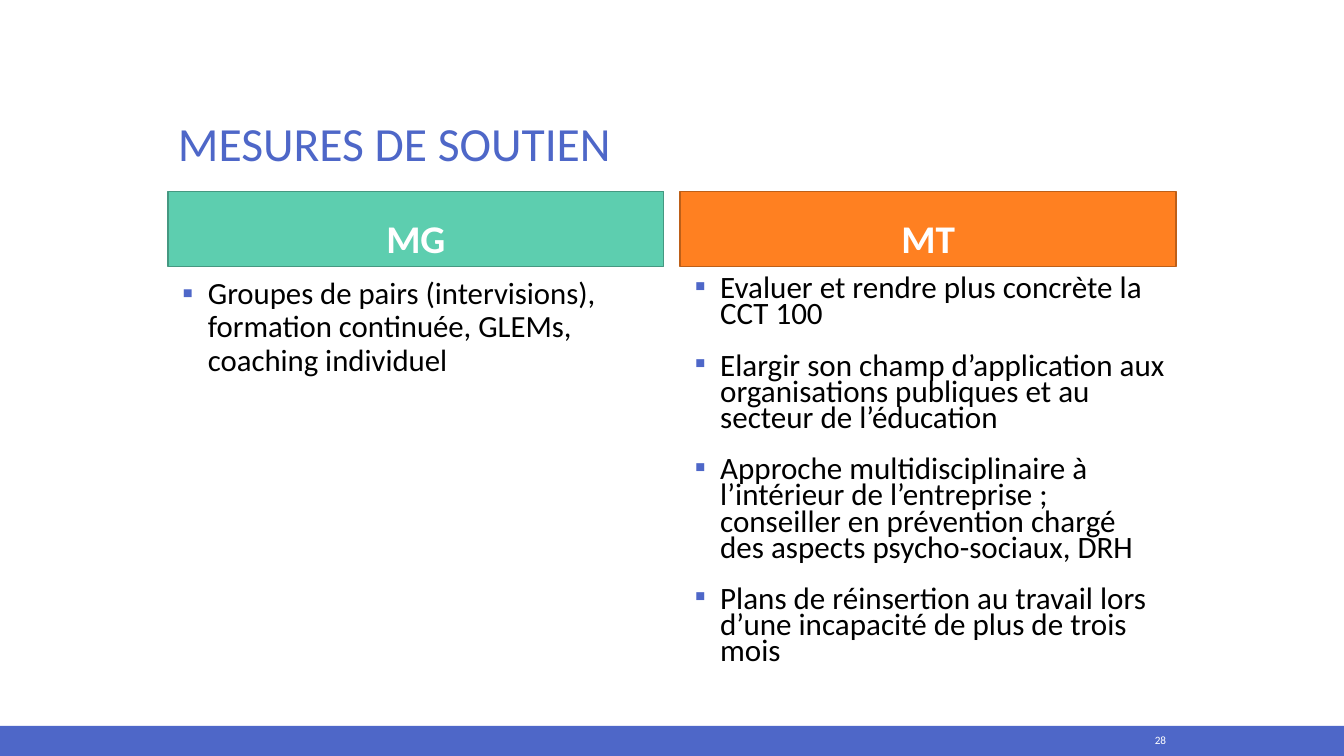
import pptx
import pptx.dml.color
import pptx.enum.shapes
import pptx.enum.text
import pptx.oxml
import pptx.oxml.ns
import pptx.util
from pptx.dml.color import RGBColor
from pptx.util import Cm

BLUE = RGBColor(0x4E, 0x67, 0xC8)
GREEN = RGBColor(0x5D, 0xCE, 0xAF)
DARK_GREEN = RGBColor(0x45, 0x98, 0x81)
ORANGE = RGBColor(0xFF, 0x80, 0x21)
DARK_ORANGE = RGBColor(0xBD, 0x5F, 0x18)
WHITE = RGBColor(0xFF, 0xFF, 0xFF)
BLACK = RGBColor(0, 0, 0)

ANCHOR = pptx.enum.text.MSO_ANCHOR
ALIGN = pptx.enum.text.PP_ALIGN
RECTANGLE = pptx.enum.shapes.MSO_SHAPE.RECTANGLE


def write(paragraph, text, size, color, align=ALIGN.LEFT, spacing=0.9, bold=False):
    paragraph.alignment = align
    paragraph.line_spacing = spacing
    run = paragraph.add_run()
    run.text = text
    run.font.name = "Calibri"
    run.font.size = pptx.util.Pt(size)
    run.font.bold = bold
    run.font.color.rgb = color


def add_bullet(paragraph):
    paragraph.space_before = pptx.util.Pt(18)
    properties = paragraph._p.get_or_add_pPr()
    properties.set("marL", str(Cm(0.76)))
    properties.set("indent", str(Cm(-0.64)))
    namespace = pptx.oxml.ns.nsdecls("a")
    for xml in (
        f'<a:buClr {namespace}><a:srgbClr val="{BLUE}"/></a:buClr>',
        f'<a:buFont {namespace} typeface="Calibri"/>',
        f'<a:buChar {namespace} char="▪"/>',
    ):
        properties.append(pptx.oxml.parse_xml(xml))


presentation = pptx.Presentation()
presentation.slide_width = Cm(33.87)
presentation.slide_height = Cm(19.05)
slide = presentation.slides.add_slide(presentation.slide_layouts[5])

footer_band = slide.shapes.add_shape(RECTANGLE, 0, Cm(18.29), Cm(33.87), Cm(0.76))
footer_band.shadow.inherit = False
footer_band.fill.solid()
footer_band.fill.fore_color.rgb = BLUE
footer_band.line.fill.background()

heading = slide.shapes.title
heading.left, heading.top, heading.width, heading.height = Cm(4.23), Cm(1.27), Cm(25.4), Cm(3.18)
heading.text_frame.auto_size = pptx.enum.text.MSO_AUTO_SIZE.NONE
heading.text_frame.vertical_anchor = ANCHOR.BOTTOM
write(heading.text_frame.paragraphs[0], "MESURES DE SOUTIEN", 34, BLUE)

columns = [
    ("MG", GREEN, DARK_GREEN, 22, 0.9, 10.26, [
        "Groupes de pairs (intervisions), formation continuée, GLEMs, coaching individuel",
    ]),
    ("MT", ORANGE, DARK_ORANGE, 22.2, 0.7, 10.52, [
        "Evaluer et rendre plus concrète la CCT 100",
        "Elargir son champ d’application aux organisations publiques et au secteur de l’éducation",
        "Approche multidisciplinaire à l’intérieur de l’entreprise ; conseiller en prévention chargé des aspects psycho-sociaux, DRH",
        "Plans de réinsertion au travail lors d’une incapacité de plus de trois mois",
    ]),
]

for index, (group, color, border, size, spacing, height, measures) in enumerate(columns):
    left = Cm(4.23 + index * 12.91)

    group_header = slide.shapes.add_shape(RECTANGLE, left, Cm(4.82), Cm(12.5), Cm(1.9))
    group_header.shadow.inherit = False
    group_header.fill.solid()
    group_header.fill.fore_color.rgb = color
    group_header.line.color.rgb = border
    group_header.line.width = pptx.util.Pt(1)
    group_header.text_frame.vertical_anchor = ANCHOR.BOTTOM
    write(group_header.text_frame.paragraphs[0], group, 28, WHITE, ALIGN.CENTER, bold=True)

    measure_list = slide.shapes.add_textbox(left, Cm(6.88), Cm(12.5), Cm(height)).text_frame
    measure_list.word_wrap = True
    for position, measure in enumerate(measures):
        paragraph = measure_list.add_paragraph() if position else measure_list.paragraphs[0]
        write(paragraph, measure, size, BLACK, spacing=spacing)
        add_bullet(paragraph)

page_number = slide.shapes.add_textbox(Cm(27.48), Cm(18.34), Cm(2.16), Cm(0.64)).text_frame
page_number.word_wrap = True
page_number.vertical_anchor = ANCHOR.MIDDLE
write(page_number.paragraphs[0], "28", 8, WHITE, ALIGN.RIGHT, spacing=1.0)

presentation.save("out.pptx")
